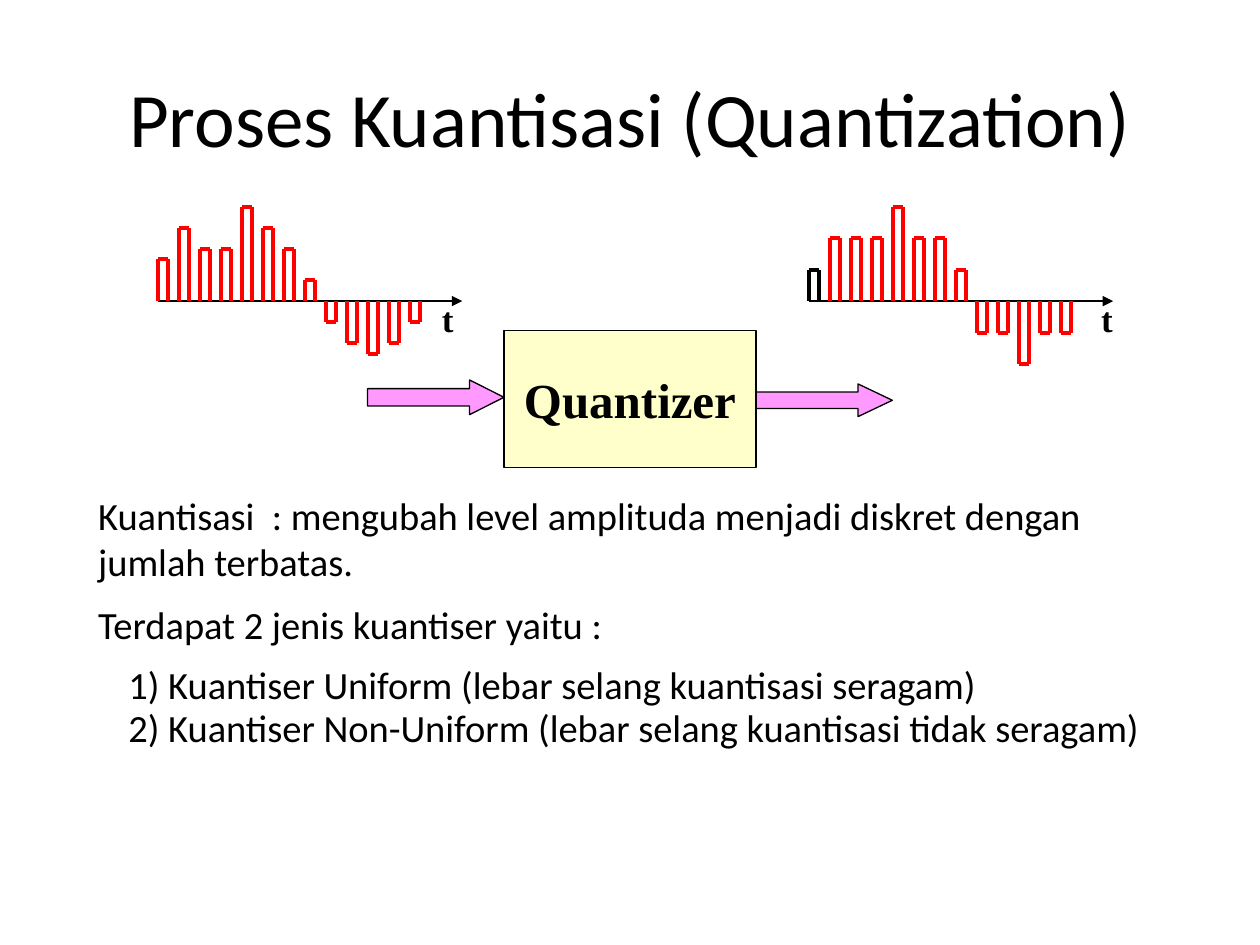
from lxml.etree import SubElement
from pptx import Presentation
from pptx.dml.color import RGBColor
from pptx.enum.shapes import MSO_CONNECTOR, MSO_SHAPE
from pptx.enum.text import MSO_ANCHOR, MSO_AUTO_SIZE, PP_ALIGN
from pptx.oxml.ns import qn
from pptx.util import Cm, Pt

COLORS = {"ink": "000000", "pulse": "FF0000", "arrow": "FF99FF", "box": "FFFFCC"}
SANS, SERIF = "Calibri", "Times New Roman"
STEP = 2.54 / 12  # grid unit of the pulse trains, in cm
AXIS_Y = 6.07
SAMPLED = [4, 7, 5, 5, 9, 7, 5, 2, -2, -4, -5, -4, -2]
QUANTIZED = [3, 6, 6, 6, 9, 6, 6, 3, -3, -3, -6, -3, -3]


def rgb(name):
    return RGBColor.from_string(COLORS[name])


def set_font(p, size, name, bold=False):
    p.font.size = Pt(size)
    p.font.name = name
    p.font.bold = bold
    p.font.color.rgb = rgb("ink")


def add_title(slide, text):
    title = slide.shapes.title
    title.left, title.top, title.width, title.height = Cm(1.27), Cm(0.76), Cm(22.86), Cm(3.18)
    tf = title.text_frame
    tf.text = text
    tf.vertical_anchor = MSO_ANCHOR.MIDDLE
    p = tf.paragraphs[0]
    p.alignment = PP_ALIGN.CENTER
    set_font(p, 44, SANS)


def add_text(slide, text, x, y, w, h, size=22, name=SANS, bold=False, wrap=False):
    tf = slide.shapes.add_textbox(Cm(x), Cm(y), Cm(w), Cm(h)).text_frame
    tf.word_wrap = wrap
    tf.auto_size = MSO_AUTO_SIZE.SHAPE_TO_FIT_TEXT
    p = tf.paragraphs[0]
    p.text = text
    set_font(p, size, name, bold)


def add_block(slide, kind, x, y, w, h, fill):
    sp = slide.shapes.add_shape(kind, Cm(x), Cm(y), Cm(w), Cm(h))
    sp.shadow.inherit = False
    sp.fill.solid()
    sp.fill.fore_color.rgb = rgb(fill)
    sp.line.color.rgb = rgb("ink")
    sp.line.width = Pt(0.75)
    return sp


def add_flow_arrow(slide, x, y, h, head):
    sp = add_block(slide, MSO_SHAPE.RIGHT_ARROW, x, y, 2.75, h, "arrow")
    sp.adjustments[0] = 0.5
    sp.adjustments[1] = head


def add_quantizer(slide):
    sp = add_block(slide, MSO_SHAPE.RECTANGLE, 10.16, 6.67, 5.08, 2.75, "box")
    tf = sp.text_frame
    tf.word_wrap = False
    tf.vertical_anchor = MSO_ANCHOR.MIDDLE
    p = tf.paragraphs[0]
    p.text = "Quantizer"
    p.alignment = PP_ALIGN.CENTER
    set_font(p, 28, SERIF, bold=True)


def add_line(slide, x1, y1, x2, y2, color, width, arrow=False):
    line = slide.shapes.add_connector(MSO_CONNECTOR.STRAIGHT, Cm(x1), Cm(y1), Cm(x2), Cm(y2))
    line.line.color.rgb = rgb(color)
    line.line.width = Pt(width)
    if arrow:
        SubElement(line.line._get_or_add_ln(), qn("a:tailEnd"), type="triangle")
    SubElement(line._element.spPr, qn("a:effectLst"))


def add_pulse_train(slide, x, levels, first_color="pulse"):
    """Draw a time axis with one open-ended pulse for each level."""
    add_line(slide, x, AXIS_Y, x + 29 * STEP, AXIS_Y, "ink", 0.75, arrow=True)
    for i, level in enumerate(levels):
        color = "pulse" if i else first_color
        left = x + 2 * i * STEP
        right = left + STEP
        end = AXIS_Y - level * STEP
        for side in (left, right):
            add_line(slide, side, AXIS_Y, side, end, color, 2.25)
        add_line(slide, left, end, right, end, color, 2.25)


def main():
    prs = Presentation()
    prs.slide_width, prs.slide_height = Cm(25.4), Cm(19.05)
    slide = prs.slides.add_slide(prs.slide_layouts[5])

    add_title(slide, "Proses Kuantisasi (Quantization)")
    add_flow_arrow(slide, 7.41, 7.66, 0.7, 0.99)
    add_flow_arrow(slide, 15.24, 7.74, 0.66, 1.05)
    add_quantizer(slide)

    add_pulse_train(slide, 3.18, SAMPLED)
    add_pulse_train(slide, 16.3, QUANTIZED, first_color="ink")
    for x in (8.66, 21.95):
        add_text(slide, "t", x, 5.87, 0.74, 1.1, size=20, name=SERIF, bold=True)

    add_text(slide, "Kuantisasi  : mengubah level amplituda menjadi diskret dengan jumlah terbatas.",
             1.73, 9.8, 21.92, 2.13, wrap=True)
    add_text(slide, "Terdapat 2 jenis kuantiser yaitu :", 1.73, 11.99, 11.05, 1.19)
    add_text(slide, "1) Kuantiser Uniform (lebar selang kuantisasi seragam)",
             2.34, 13.2, 18.24, 1.19)
    add_text(slide, "2) Kuantiser Non-Uniform (lebar selang kuantisasi tidak seragam)",
             2.34, 14.07, 21.67, 1.19)
    prs.save("out.pptx")


if __name__ == "__main__":
    main()
